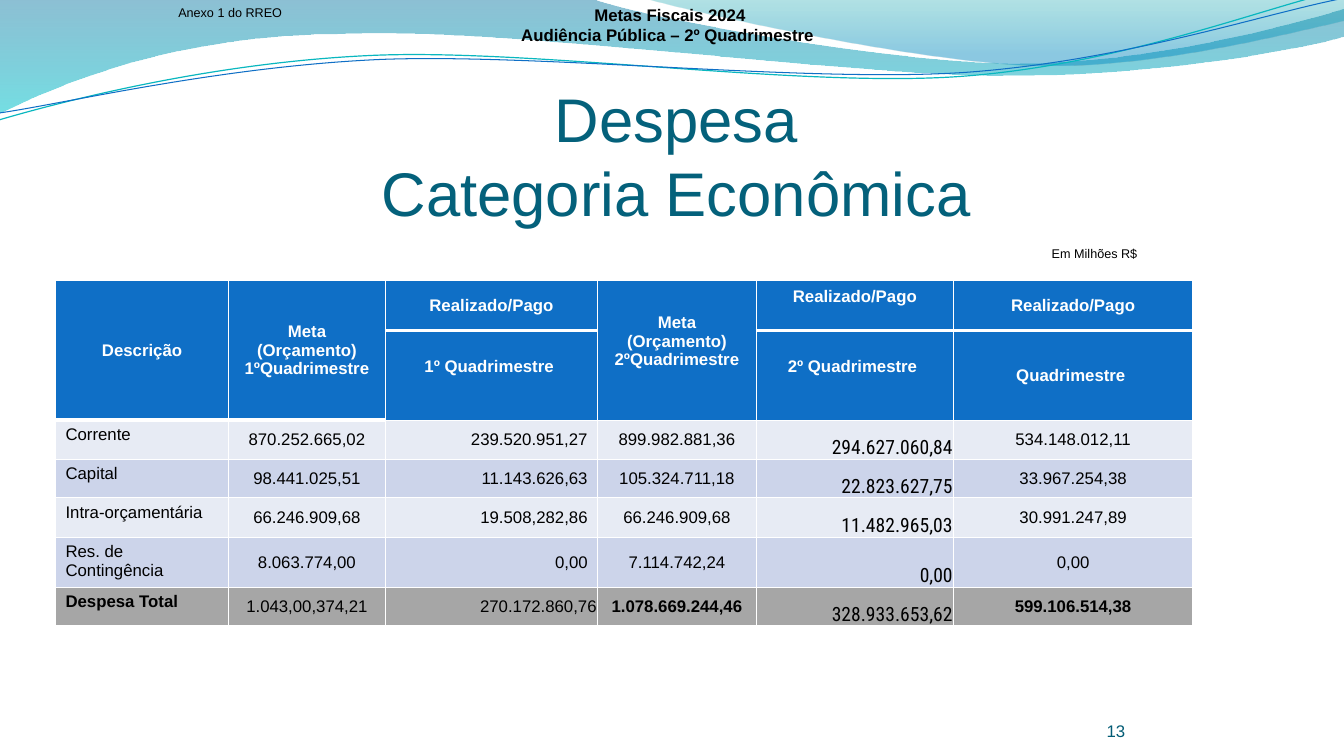
from math import cos, radians, sin

from lxml import etree
from pptx import Presentation
from pptx.dml.color import RGBColor
from pptx.enum.text import MSO_ANCHOR, PP_ALIGN
from pptx.oxml.ns import qn
from pptx.util import Inches, Pt

LEFT, CENTER, RIGHT = PP_ALIGN.LEFT, PP_ALIGN.CENTER, PP_ALIGN.RIGHT
TOP, MIDDLE, BOTTOM = MSO_ANCHOR.TOP, MSO_ANCHOR.MIDDLE, MSO_ANCHOR.BOTTOM
COLORS = {
    "title": "04617B", "number": "035C75", "black": "000000", "white": "FFFFFF",
    "header": "0F6FC6", "light": "E7EBF4", "dark": "CCD4EA", "total": "A6A6A6",
    "wave_blue": "0074A0", "wave_cyan": "00C4CD", "crest_blue": "008ABF",
    "crest_teal": "00A0A8", "line_teal": "09B7BF",
}
RGB = {name: RGBColor.from_string(value) for name, value in COLORS.items()}

prs = Presentation()
prs.slide_width, prs.slide_height = Inches(13.33), Inches(7.5)
s = prs.slides.add_slide(prs.slide_layouts[6])


def add_wave(start, segments, closed):
    fb = s.shapes.build_freeform(Inches(start[0]), Inches(start[1]))
    fb.add_line_segments([(Inches(x), Inches(y)) for *_, x, y in segments], close=closed)
    sp = fb.convert_to_shape()
    sp.shadow.inherit = False
    for ln, seg in zip(list(sp._element.iter(qn("a:lnTo"))), segments):
        if len(seg) == 6:
            ln.tag = qn("a:cubicBezTo")
            for i, (x, y) in enumerate([seg[:2], seg[2:4]]):
                pt = etree.Element(qn("a:pt"), x=str(Inches(x) - sp.left),
                                   y=str(Inches(y) - sp.top))
                ln.insert(i, pt)
    return sp


def add_text(box, lines, size, color, align=LEFT, anchor=TOP,
             insets=(0.1, 0.05, 0.1, 0.05), bold=False, wrap=True):
    tf = s.shapes.add_textbox(*map(Inches, box)).text_frame
    tf.word_wrap = wrap
    tf.vertical_anchor = anchor
    tf.margin_left, tf.margin_top, tf.margin_right, tf.margin_bottom = map(Inches, insets)
    tf.text = "\n".join(lines)
    for p in tf.paragraphs:
        p.alignment = align
        p.font.name, p.font.size, p.font.bold = "Arial", Pt(size), bold
        p.font.color.rgb = RGB[color]


bands = [
    ((-0.01, 0), [(5.87, -0.01), (6.34, 0.17, 8.85, 0.63, 10.11, 0.63),
                  (11.37, 0.63, 12.78, 0.26, 13.33, 0.09), (13.35, 0.36),
                  (13.11, 0.44, 11.6, 0.76, 9.94, 0.75),
                  (8.29, 0.75, 5.09, 0.28, 3.43, 0.34),
                  (1.72, 0.35, 0.61, 0.83, -0.01, 1.13), (-0.01, 0)],
     270, [(0, "wave_blue", 45), (1, "wave_cyan", 55)]),
    ((6.39, -0.01), [(6.79, 0.11, 9.09, 0.62, 10.25, 0.65),
                     (11.41, 0.69, 12.82, 0.32, 13.33, 0.21), (13.33, 0), (6.39, -0.01)],
     90, [(0.2, "crest_blue", 45), (1, "crest_teal", 30)]),
]
for start, segments, angle, stops in bands:
    sp = add_wave(start, segments, True)
    sp.line.fill.background()
    sp.fill.gradient()
    sp.fill.gradient_angle = angle
    for stop, (position, color, alpha) in zip(sp.fill.gradient_stops, stops):
        stop.position = position
        stop.color.rgb = RGB[color]
    for clr, (position, color, alpha) in zip(sp._element.spPr.iter(qn("a:srgbClr")), stops):
        etree.SubElement(clr, qn("a:alpha"), val=str(alpha * 1000))

tilt = 2.7
strands = [
    ([(-0.01, 1.19), (0.64, 1), (2.11, 0.62), (3.69, 0.55), (5.27, 0.48), (7.9, 0.87),
      (9.5, 0.76), (11.1, 0.65), (12.52, 0.08), (13.31, -0.1)],
     (6.65, 0.57), "line_teal", 0.85),
    ([(0, 1.12), (0.63, 1.03), (2.18, 0.66), (3.78, 0.59), (5.37, 0.53), (7.96, 0.82),
      (9.55, 0.72), (11.15, 0.61), (12.55, 0.13), (13.34, -0.02)],
     (6.67, 0.59), "header", 0.75),
]
for points, (cx, cy), color, width in strands:
    co, si = cos(radians(tilt)), sin(radians(tilt))
    level = [(cx + (x - cx) * co - (y - cy) * si, cy + (x - cx) * si + (y - cy) * co)
             for x, y in points]
    segments = [sum(level[i:i + 3], ()) for i in range(1, len(level), 3)]
    sp = add_wave(level[0], segments, False)
    sp.rotation = 360 - tilt
    sp.fill.background()
    sp.line.color.rgb = RGB[color]
    sp.line.width = Pt(width)

add_text((2.21, 1.02, 9, 1.25), ["Despesa\vCategoria Econômica"], 44, "title",
         CENTER, BOTTOM, (0, 0.05, 0, 0))

rows = [
    ["Descrição", "Meta (Orçamento)\n1ºQuadrimestre", "Realizado/Pago",
     "Meta (Orçamento)\n2ºQuadrimestre", "Realizado/Pago", "Realizado/Pago"],
    ["", "", "1º Quadrimestre ", "", "2º Quadrimestre ", "Quadrimestre "],
    ["Corrente", "870.252.665,02", "239.520.951,27", "899.982.881,36",
     "294.627.060,84", "534.148.012,11"],
    ["Capital", "98.441.025,51", "11.143.626,63", "105.324.711,18",
     "22.823.627,75", "33.967.254,38"],
    ["Intra-orçamentária", "66.246.909,68", "19.508,282,86", "66.246.909,68",
     "11.482.965,03", "30.991.247,89"],
    ["Res. de Contingência", "8.063.774,00", "0,00", "7.114.742,24", "0,00", "0,00"],
    ["Despesa Total", "1.043,00,374,21", "270.172.860,76", "1.078.669.244,46",
     "328.933.653,62", "599.106.514,38"],
]
col_widths = [1.72, 1.55, 2.11, 1.57, 1.96, 2.37]
row_heights = [0.5, 0.89, 0.39, 0.38, 0.39, 0.5, 0.38]
row_fills = ["header", "header", "light", "dark", "light", "dark", "total"]
col_aligns = [LEFT, CENTER, RIGHT, CENTER, RIGHT, CENTER]
col_anchors = [TOP, MIDDLE, MIDDLE, MIDDLE, BOTTOM, MIDDLE]
raised_headers = {(0, 3), (0, 4), (1, 2), (1, 4)}
bold_totals = {0, 3, 5}
merged_cols = {0, 1, 3}

table = s.shapes.add_table(len(rows), len(col_widths), Inches(0.55), Inches(2.78),
                           Inches(sum(col_widths)), Inches(sum(row_heights))).table
table.horz_banding = False
table.first_row = False
for column, width in zip(table.columns, col_widths):
    column.width = Inches(width)
for row, height in zip(table.rows, row_heights):
    row.height = Inches(height)
for c in merged_cols:
    table.cell(0, c).merge(table.cell(1, c))

for r, values in enumerate(rows):
    for c, value in enumerate(values):
        cell = table.cell(r, c)
        header, total, condensed = r < 2, r == 6, r >= 2 and c == 4
        thick = set()
        if r == 0 and c != 3 or r == 1 and c in (0, 1):
            thick.add("B")
        if r == 1 and c not in merged_cols or r == 2 and c in (0, 1):
            thick.add("T")
        tcPr = cell._tc.get_or_add_tcPr()
        for side in "LRTB":
            ln = etree.SubElement(tcPr, qn("a:ln" + side),
                                  w=str(Pt(3 if side in thick else 0.96)))
            fill = etree.SubElement(ln, qn("a:solidFill"))
            etree.SubElement(fill, qn("a:srgbClr"), val=COLORS["white"])
        cell.fill.solid()
        cell.fill.fore_color.rgb = RGB[row_fills[r]]
        cell.vertical_anchor = MIDDLE if header else col_anchors[c]
        side_margin = 0.01 if condensed or total and c else 0.1
        cell.margin_left = cell.margin_right = Inches(side_margin)
        cell.margin_top = Inches(0.01 if condensed else 0.05)
        cell.margin_bottom = Inches(0 if condensed else 0.23 if (r, c) in raised_headers else 0.05)
        cell.text = value
        for p in cell.text_frame.paragraphs:
            p.alignment = CENTER if header else col_aligns[c]
            p.font.name = "Roboto Condensed" if condensed else "Arial"
            p.font.size = Pt(14 if condensed else 12)
            p.font.bold = header or total and c in bold_totals
            p.font.color.rgb = RGB["white" if header else "black"]

add_text((10.33, 6.95, 0.83, 0.4), ["13"], 12, "number", RIGHT, BOTTOM, (0, 0, 0, 0))
add_text((10.33, 2.39, 1.05, 0.25), ["Em Milhões R$"], 9, "black", CENTER, wrap=False)
add_text((1.67, 0, 1.36, 0.25), ["Anexo 1 do RREO"], 9, "black")
add_text((4.95, 0, 3.39, 0.5), ["Metas Fiscais 2024", "Audiência Pública – 2º Quadrimestre "],
         12, "black", CENTER, MIDDLE, bold=True)

prs.save("out.pptx")
